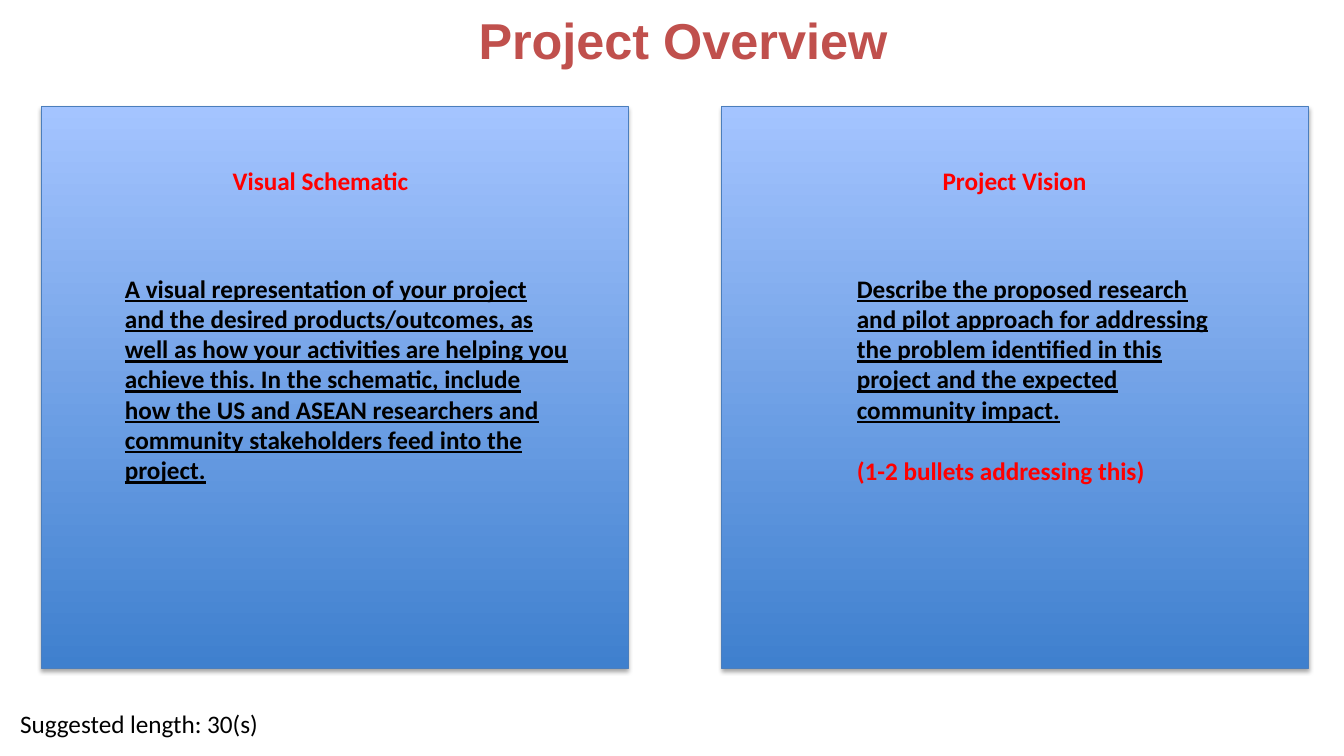
"""Build the Project Overview slide with two gradient panels."""
from lxml import etree
from pptx import Presentation
from pptx import util as u
from pptx.dml.color import RGBColor
from pptx.enum import shapes, text
from pptx.oxml import ns

PX = 9144
BLACK = RGBColor(0x00, 0x00, 0x00)
RED = RGBColor(0xFF, 0x00, 0x00)
BRICK = RGBColor(0xC0, 0x50, 0x4D)
DEEP = RGBColor(0x3F, 0x80, 0xCE)
PALE = RGBColor(0xA4, 0xC4, 0xFF)
EDGE = RGBColor(0x4B, 0x7E, 0xBC)


def write(para, words, font="Calibri", size=18, color=BLACK, bold=False,
          under=False, align=None, indent=0, before=0):
    run = para.add_run()
    run.text = words
    face = run.font
    face.name, face.size, face.bold = font, u.Pt(size), bold
    face.underline = under
    face.color.rgb = color
    para.alignment = align
    para.space_before = u.Pt(before)
    if indent:
        para.level = 1
        props = para._p.get_or_add_pPr()
        props.set("marL", str(indent * PX))
        props.set("indent", "0")


class Page:
    def __init__(self, deck):
        self.slide = deck.slides.add_slide(deck.slide_layouts[5])
        self.items = self.slide.shapes

    def title(self, words, *box):
        head = self.items.title
        head.left, head.top, head.width, head.height = [n * PX for n in box]
        frame = head.text_frame
        frame.word_wrap = True
        frame.auto_size = text.MSO_AUTO_SIZE.NONE
        frame.vertical_anchor = text.MSO_ANCHOR.MIDDLE
        write(frame.paragraphs[0], words, font="Arial", size=36, color=BRICK,
              bold=True, align=text.PP_ALIGN.CENTER)

    def panel(self, *box):
        rect = self.items.add_shape(shapes.MSO_SHAPE.RECTANGLE, *[n * PX for n in box])
        rect.fill.gradient()
        rect.fill.gradient_angle = 90
        for stop, color in zip(rect.fill.gradient_stops, (DEEP, PALE)):
            stop.color.rgb = color
        rect.line.color.rgb = EDGE
        rect.line.width = u.Pt(0.75)
        rect.shadow.inherit = False
        glow = etree.SubElement(
            rect._element.spPr.find(ns.qn("a:effectLst")), ns.qn("a:outerShdw"),
            blurRad=str(u.Pt(3.1)), dist=str(u.Pt(1.8)), dir="5400000", rotWithShape="0")
        tint = etree.SubElement(glow, ns.qn("a:srgbClr"), val=str(BLACK))
        etree.SubElement(tint, ns.qn("a:alpha"), val="35000")

    def label(self, box, *lines, wrap=False):
        frame = self.items.add_textbox(*[n * PX for n in box]).text_frame
        frame.word_wrap = wrap
        frame.auto_size = text.MSO_AUTO_SIZE.SHAPE_TO_FIT_TEXT
        for i, (words, style) in enumerate(lines):
            para = frame.add_paragraph() if i else frame.paragraphs[0]
            write(para, words, **style)


def main():
    deck = Presentation()
    deck.slide_width, deck.slide_height = 1333 * PX, 750 * PX
    page = Page(deck)
    page.title("Project Overview", 141, 11, 1073, 57)
    for left in (716, 41):
        page.panel(left, 106, 582, 557)

    head = dict(color=RED, bold=True)
    body = dict(bold=True, under=True, indent=50)
    hint = dict(head, indent=50, before=22)
    page.label((10, 698, 259, 40), ("Suggested length: 30(s)", {}))
    page.label((221, 159, 196, 40), ("Visual Schematic", head))
    page.label((925, 159, 164, 40), ("Project Vision", head))
    page.label((64, 266, 510, 222), (
        "A visual representation of your project and the desired products/outcomes, "
        "as well as how your activities are helping you achieve this. In the schematic, "
        "include how the US and ASEAN researchers and community stakeholders feed into "
        "the project.", body), wrap=True)
    page.label((790, 266, 433, 252), (
        "Describe the proposed research and pilot approach for addressing the problem "
        "identified in this project and the expected community impact.", body),
        ("(1-2 bullets addressing this)", hint), wrap=True)
    deck.save("out.pptx")


if __name__ == "__main__":
    main()
